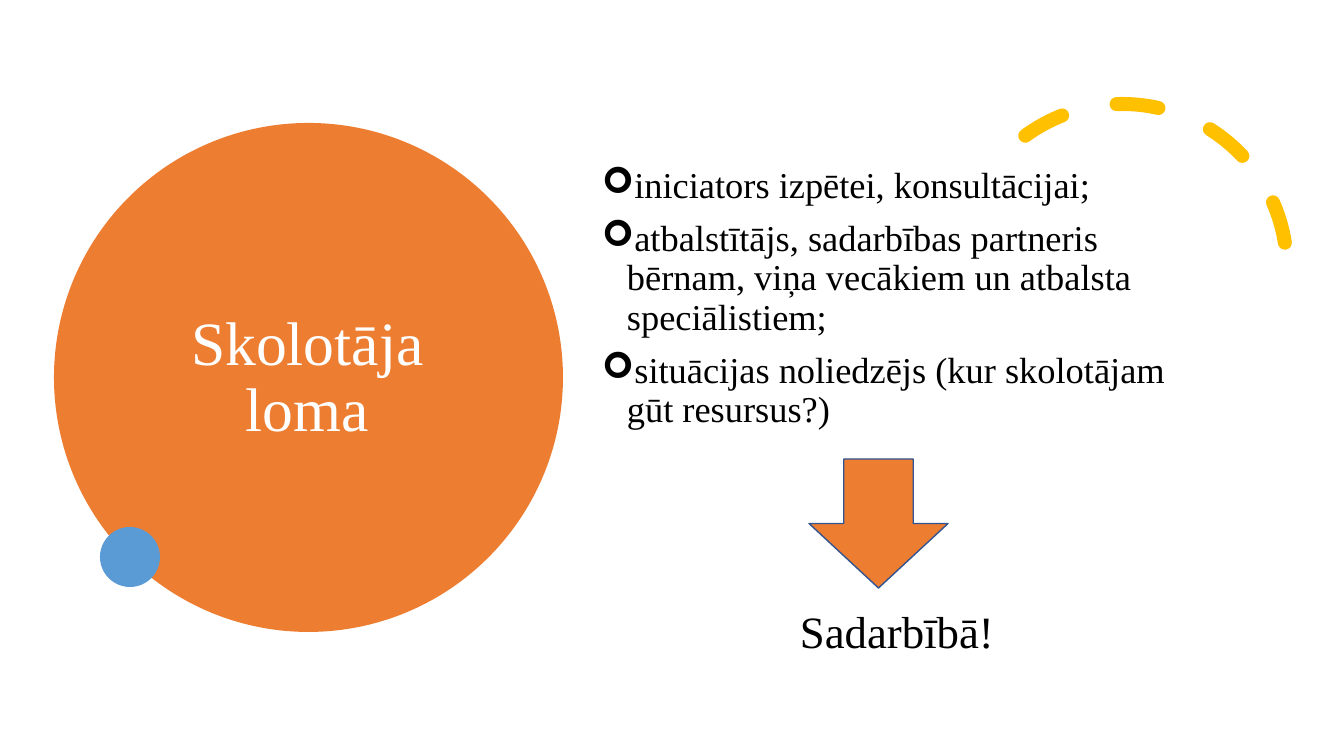
"""Builds a slide about the role of the teacher."""
from lxml import etree
from pptx import Presentation
from pptx.dml.color import RGBColor
from pptx.enum.dml import MSO_LINE
from pptx.enum.shapes import MSO_SHAPE
from pptx.enum.text import MSO_ANCHOR, PP_ALIGN
from pptx.oxml.ns import qn
from pptx.util import Emu, Pt

ELLIPSE, ARC, DOWN_ARROW = MSO_SHAPE.OVAL, MSO_SHAPE.ARC, MSO_SHAPE.DOWN_ARROW
DASH = MSO_LINE.DASH
TOP, MIDDLE = MSO_ANCHOR.TOP, MSO_ANCHOR.MIDDLE
LEFT, CENTER = PP_ALIGN.LEFT, PP_ALIGN.CENTER

EMU_PER_PX = 914400 / 100.8
FONT = "Times New Roman"
COLORS = {
    "orange": "ED7D31",
    "blue": "5B9BD5",
    "yellow": "FFC000",
    "outline": "325491",
    "white": "FFFFFF",
    "black": "000000",
}
ROLES = [
    "iniciators izpētei, konsultācijai;",
    "atbalstītājs, sadarbības partneris bērnam, viņa vecākiem un atbalsta speciālistiem;",
    "situācijas noliedzējs (kur skolotājam gūt resursus?)",
]


def px(length):
    """Turn pixels into EMU."""
    return Emu(round(length * EMU_PER_PX))


def color(name):
    """Look up a named colour."""
    return RGBColor.from_string(COLORS[name])


def add_figure(page, kind, area, fill=None, line=None, width=1):
    """Add a preset shape with an optional fill and outline."""
    figure = page.shapes.add_shape(kind, *map(px, area))
    figure.shadow.inherit = False
    if fill:
        figure.fill.solid()
        figure.fill.fore_color.rgb = color(fill)
    else:
        figure.fill.background()
    if line:
        figure.line.color.rgb = color(line)
        figure.line.width = Pt(width)
    else:
        figure.line.fill.background()
    return figure


def add_dashed_arc(page, area):
    """Add the yellow arc with rounded dashes."""
    arc = add_figure(page, ARC, area, line="yellow", width=10)
    arc.adjustments[0], arc.adjustments[1] = 158.17, 17.81
    arc.rotation = 330.2
    arc.line.dash_style = DASH
    arc.line._get_or_add_ln().set("cap", "rnd")


def add_bullet(para):
    """Give a paragraph an arrow bullet with a hanging indent."""
    properties = para._p.get_or_add_pPr()
    properties.set("marL", str(px(25)))
    properties.set("indent", str(px(-25)))
    etree.SubElement(properties, qn("a:buFont"), typeface="Wingdings")
    etree.SubElement(properties, qn("a:buChar"), char="➢")


def add_text(page, area, lines, size, ink="black", align=LEFT, anchor=TOP, bullets=False):
    """Add a wrapped text box with one paragraph per line."""
    box = page.shapes.add_textbox(*map(px, area))
    frame = box.text_frame
    frame.word_wrap = True
    frame.vertical_anchor = anchor
    for index, line in enumerate(lines):
        para = frame.add_paragraph() if index else frame.paragraphs[0]
        para.alignment = align
        para.line_spacing = 0.9
        para.space_before = Pt(10 if bullets else 0)
        if bullets:
            add_bullet(para)
        span = para.add_run()
        span.text = line
        span.font.name = FONT
        span.font.size = Pt(size)
        span.font.color.rgb = color(ink)


def main():
    """Build and save the deck."""
    deck = Presentation()
    deck.slide_width, deck.slide_height = px(1344), px(756)
    page = deck.slides.add_slide(deck.slide_layouts[6])
    add_figure(page, ELLIPSE, (54, 123, 509, 509), fill="orange")
    add_text(page, (129, 154, 357, 449), ["Skolotāja loma"], 44, "white", CENTER, MIDDLE)
    add_dashed_arc(page, (958, 104, 329, 329))
    add_figure(page, ELLIPSE, (100, 527, 60, 60), fill="blue")
    add_text(page, (592, 162, 610, 280), ROLES, 26, bullets=True)
    add_figure(page, DOWN_ARROW, (809, 459, 139, 129), fill="orange", line="outline")
    add_text(page, (592, 605, 610, 60), ["Sadarbībā!"], 32, align=CENTER)
    deck.save("out.pptx")


if __name__ == "__main__":
    main()
